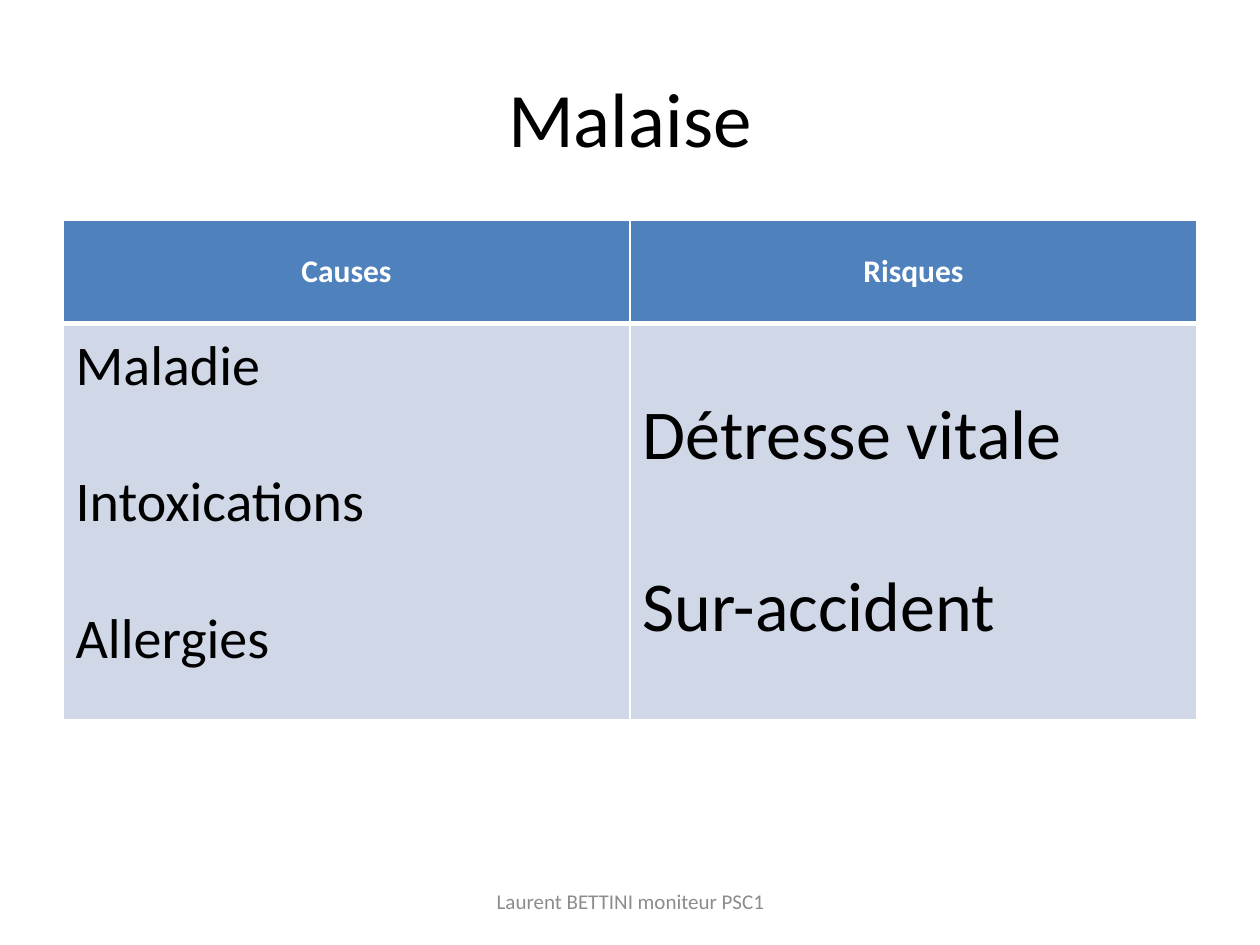
from lxml.etree import SubElement
from pptx import Presentation
from pptx.dml.color import RGBColor
from pptx.enum.text import MSO_ANCHOR, PP_ALIGN
from pptx.oxml.ns import qn
from pptx.util import Inches, Pt

# Content
TITLE = "Malaise"
FOOT = "Laurent BETTINI moniteur PSC1"
COLS = [
    {"head": "Causes", "items": ["Maladie", "Intoxications", "Allergies"],
     "size": 32, "base": 0.35},
    {"head": "Risques", "items": ["Détresse vitale", "Sur-accident"],
     "size": 40, "base": 0.05},
]

# Look
FONT = "Calibri"
LINE = 1.22  # line height as a share of the font size
BLACK = RGBColor(0, 0, 0)
WHITE = RGBColor(255, 255, 255)
GREY = RGBColor(0x8C, 0x8C, 0x8C)
BLUE = RGBColor(0x4F, 0x81, 0xBD)
PALE = RGBColor(0xD0, 0xD8, 0xE8)

# Grid
WIDE, HIGH = 10, 7.5
EDGE = WIDE * 0.05
SPAN = WIDE - 2 * EDGE
TOP, ROWS = 1.75, (0.82, 3.14)


def write(frame, lines, size=18, color=BLACK, bold=False,
          align=PP_ALIGN.CENTER, gap=0):
    for i, line in enumerate(lines):
        para = frame.paragraphs[0] if i == 0 else frame.add_paragraph()
        para.alignment = align
        if i:
            para.space_before = Pt(gap)
        run = para.add_run()
        run.text = line
        font = run.font
        font.name, font.size, font.bold = FONT, Pt(size), bold
        font.color.rgb = color


def label(slide, box, text, **look):
    frame = slide.shapes.add_textbox(*map(Inches, box)).text_frame
    frame.word_wrap = True
    frame.vertical_anchor = MSO_ANCHOR.MIDDLE
    write(frame, [text], **look)


def paint(cell, fill, **rules):
    """Fill a cell and rule its sides in white, 1 pt unless given."""
    cell.vertical_anchor = MSO_ANCHOR.MIDDLE
    props = cell._tc.get_or_add_tcPr()
    for side in "LRTB":
        line = SubElement(props, qn(f"a:ln{side}"),
                          w=str(Pt(rules.get(side, 1))))
        solid = SubElement(line, qn("a:solidFill"))
        SubElement(solid, qn("a:srgbClr"), val=str(WHITE))
    cell.fill.solid()
    cell.fill.fore_color.rgb = fill


deck = Presentation()
deck.slide_width, deck.slide_height = Inches(WIDE), Inches(HIGH)
slide = deck.slides.add_slide(deck.slide_layouts[6])

# Title
label(slide, (EDGE, 0.3, SPAN, 1.25), TITLE, size=44)

# Table
box = map(Inches, (EDGE, TOP, SPAN, sum(ROWS)))
table = slide.shapes.add_table(len(ROWS), len(COLS), *box).table
for row, tall in zip(table.rows, ROWS):
    row.height = Inches(tall)
for c, col in enumerate(COLS):
    table.columns[c].width = Inches(SPAN / len(COLS))
    head, body = table.cell(0, c), table.cell(1, c)
    paint(head, BLUE, B=3)
    write(head.text_frame, [col["head"]], color=WHITE, bold=True)
    paint(body, PALE, T=3)
    body.margin_bottom = Inches(col["base"])
    write(body.text_frame, col["items"], size=col["size"],
          align=PP_ALIGN.LEFT, gap=round(col["size"] * LINE))

# Footer
label(slide, (3.42, 6.95, 3.17, 0.4), FOOT, size=12, color=GREY)

deck.save("out.pptx")
